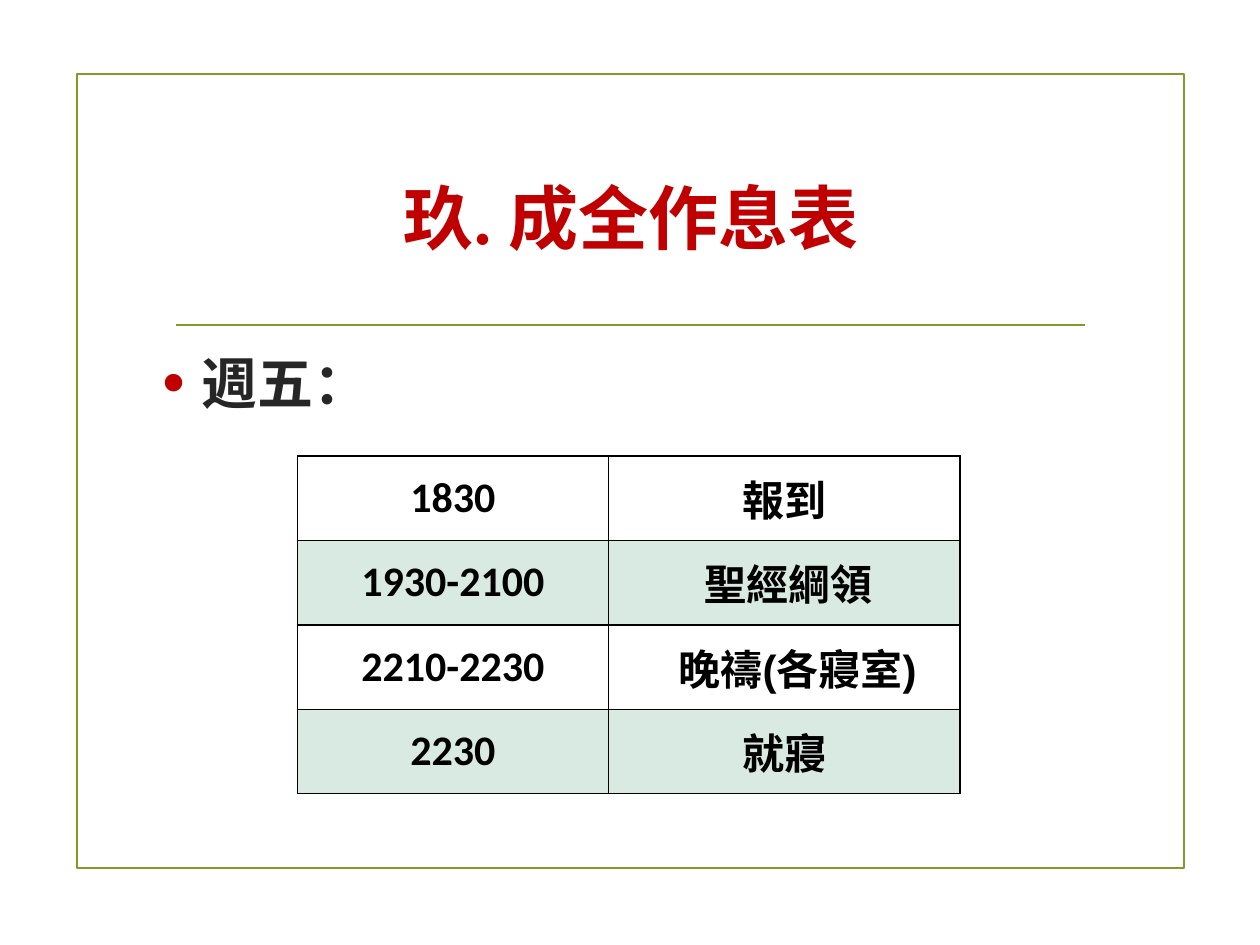
"""Build the Friday timetable slide with a framed title and a schedule table."""
from dataclasses import dataclass

from lxml import etree
from pptx import Presentation, util as u
from pptx.dml.color import RGBColor
from pptx.enum import shapes, text
from pptx.oxml.ns import qn


@dataclass(frozen=True)
class Theme:
    red: str = "C00000"
    olive: str = "83992A"
    dark: str = "262626"
    black: str = "000000"
    white: str = "FFFFFF"
    mint: str = "D8EAE2"
    title_size: int = 40
    body_size: int = 32
    cell_size: int = 24
    rule_width: float = 1.25
    border_width: float = 1


def write_text(frame, content, *, size, font, color, align=text.PP_ALIGN.LEFT):
    paragraph = frame.paragraphs[0]
    paragraph.alignment = align
    run = paragraph.add_run()
    run.text = content
    run.font.size = u.Pt(size)
    run.font.name = font
    run.font.bold = True
    run.font.color.rgb = RGBColor.from_string(color)
    return paragraph


def add_element(parent, tag, **attributes):
    element = etree.SubElement(parent, qn(tag))
    for name, value in attributes.items():
        element.set(name, str(value))
    return element


theme = Theme()
presentation = Presentation()
presentation.slide_width = u.Inches(10)
presentation.slide_height = u.Inches(7.5)
slide = presentation.slides.add_slide(presentation.slide_layouts[6])

frame = slide.shapes.add_shape(
    shapes.MSO_SHAPE.RECTANGLE, u.Inches(0.61), u.Inches(0.59), u.Inches(8.79), u.Inches(6.3)
)
frame.shadow.inherit = False
frame.fill.background()
divider = slide.shapes.add_connector(
    shapes.MSO_CONNECTOR.STRAIGHT, u.Inches(1.4), u.Inches(2.58), u.Inches(8.61), u.Inches(2.58)
)
for shape in (frame, divider):
    shape.line.color.rgb = RGBColor.from_string(theme.olive)
    shape.line.width = u.Pt(theme.rule_width)
add_element(divider.element.spPr, "a:effectLst")

title = slide.shapes.add_textbox(u.Inches(1.29), u.Inches(1), u.Inches(7.44), u.Inches(1.43))
title.text_frame.word_wrap = True
title.text_frame.vertical_anchor = text.MSO_ANCHOR.MIDDLE
write_text(title.text_frame, "玖. 成全作息表", size=theme.title_size,
           font="Times New Roman", color=theme.red, align=text.PP_ALIGN.CENTER)

day = slide.shapes.add_textbox(u.Inches(1.19), u.Inches(2.72), u.Inches(7.62), u.Inches(0.7))
day.text_frame.word_wrap = True
paragraph = write_text(day.text_frame, "週五：", size=theme.body_size,
                       font="Arial", color=theme.dark)
paragraph.space_after = u.Pt(6)
properties = paragraph._p.get_or_add_pPr()
properties.set("marL", str(u.Inches(0.31)))
properties.set("indent", str(-u.Inches(0.31)))
add_element(add_element(properties, "a:buClr"), "a:srgbClr", val=theme.red)
add_element(properties, "a:buSzPct", val=115000)
add_element(properties, "a:buFont", typeface="Arial")
add_element(properties, "a:buChar", char="•")

schedule = [
    ("1830", "報到", 0.07),
    ("1930-2100", "聖經綱領", 0.13),
    ("2210-2230", "晚禱(各寢室)", 0.28),
    ("2230", "就寢", 0.07),
]
table = slide.shapes.add_table(
    len(schedule), 2, u.Inches(2.36), u.Inches(3.62), u.Inches(5.26), u.Inches(2.68)
).table
table.first_row = False
table.horz_banding = False
for column, width in zip(table.columns, (2.47, 2.79)):
    column.width = u.Inches(width)

for row_index, (time, activity, activity_margin) in enumerate(schedule):
    table.rows[row_index].height = u.Inches(0.67)
    entries = [(time, "Calibri", 0.07), (activity, "Arial", activity_margin)]
    for column_index, (content, font, left_margin) in enumerate(entries):
        cell = table.cell(row_index, column_index)
        cell.vertical_anchor = text.MSO_ANCHOR.MIDDLE
        cell.margin_left = u.Inches(left_margin)
        cell.margin_right = u.Inches(0.07)
        cell.margin_top = cell.margin_bottom = 0
        write_text(cell.text_frame, content, size=theme.cell_size, font=font,
                   color=theme.black, align=text.PP_ALIGN.CENTER)
        cell_properties = cell._tc.get_or_add_tcPr()
        for side in ("a:lnL", "a:lnR", "a:lnT", "a:lnB"):
            border = add_element(cell_properties, side, w=u.Pt(theme.border_width))
            add_element(add_element(border, "a:solidFill"), "a:srgbClr", val=theme.black)
        cell.fill.solid()
        cell.fill.fore_color.rgb = RGBColor.from_string(theme.mint if row_index % 2 else theme.white)

presentation.save("out.pptx")
